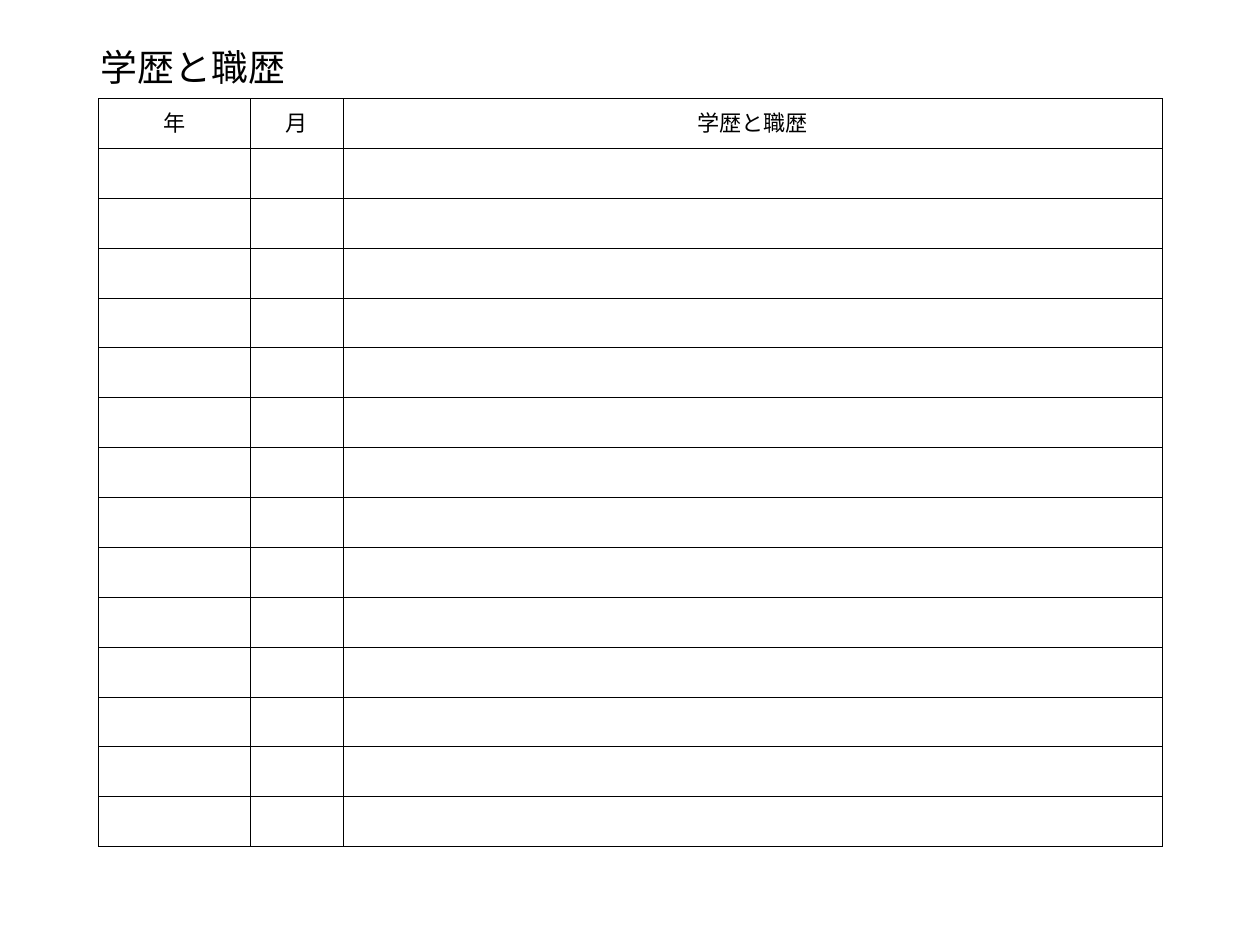
"""Build a blank education and work history form."""
import pptx
import pptx.dml.color
import pptx.enum.text
import pptx.oxml
import pptx.oxml.ns
import pptx.util
import lxml.etree

COLOURS = {"ink": "000000", "paper": "FFFFFF"}
FONT = "Noto Sans CJK JP"
TITLE = "学歴と職歴"
HEADINGS = ("年", "月", "学歴と職歴")
COLUMN_WIDTHS = (1.71, 1.05, 9.25)
ROW_COUNT = 15
ROW_HEIGHT = 8.45 / ROW_COUNT
LEFT = 1.11
TABLE_TOP = 1.11
BORDER_POINTS = 0.25


def colour(name):
    return pptx.dml.color.RGBColor.from_string(COLOURS[name])


def set_margins(frame, inches):
    for side in ("left", "right", "top", "bottom"):
        setattr(frame, f"margin_{side}", pptx.util.Inches(inches))


def add_text(para, text, size, alignment):
    para.alignment = alignment
    para.line_spacing = 0.9
    span = para.add_run()
    span.text = text
    span.font.size = pptx.util.Pt(size)
    span.font.name = FONT
    span.font.color.rgb = colour("ink")
    east_asian = lxml.etree.SubElement(
        span.font._element, pptx.oxml.ns.qn("a:ea"))
    east_asian.set("typeface", FONT)


def add_borders(cell):
    properties = cell._tc.get_or_add_tcPr()
    for position, side in enumerate(("lnL", "lnR", "lnT", "lnB")):
        border = pptx.oxml.parse_xml(
            f'<a:{side} {pptx.oxml.ns.nsdecls("a")} '
            f'w="{pptx.util.Pt(BORDER_POINTS)}"><a:solidFill>'
            f'<a:srgbClr val="{COLOURS["ink"]}"/></a:solidFill></a:{side}>')
        properties.insert(position, border)


def style_cell(cell):
    cell.fill.solid()
    cell.fill.fore_color.rgb = colour("paper")
    cell.vertical_anchor = pptx.enum.text.MSO_ANCHOR.MIDDLE
    set_margins(cell, 0.06)
    add_borders(cell)


def add_history_table(page):
    table = page.shapes.add_table(
        ROW_COUNT, len(HEADINGS),
        pptx.util.Inches(LEFT), pptx.util.Inches(TABLE_TOP),
        pptx.util.Inches(sum(COLUMN_WIDTHS)),
        pptx.util.Inches(ROW_HEIGHT * ROW_COUNT)).table
    table.first_row = False
    table.horz_banding = False
    for column, width in zip(table.columns, COLUMN_WIDTHS):
        column.width = pptx.util.Inches(width)
    for row in table.rows:
        row.height = pptx.util.Inches(ROW_HEIGHT)
    for cell in table.iter_cells():
        style_cell(cell)
    for cell, heading in zip(table.rows[0].cells, HEADINGS):
        add_text(cell.text_frame.paragraphs[0], heading, 18,
                 pptx.enum.text.PP_ALIGN.CENTER)


def add_title(page):
    box = page.shapes.add_textbox(
        pptx.util.Inches(LEFT), pptx.util.Inches(0.55),
        pptx.util.Inches(2.16), pptx.util.Inches(0.48))
    frame = box.text_frame
    frame.word_wrap = False
    frame.vertical_anchor = pptx.enum.text.MSO_ANCHOR.MIDDLE
    set_margins(frame, 0.03)
    add_text(frame.paragraphs[0], TITLE, 30, pptx.enum.text.PP_ALIGN.LEFT)


def main():
    deck = pptx.Presentation()
    deck.slide_width = pptx.util.Inches(14.22)
    deck.slide_height = pptx.util.Inches(10.67)
    page = deck.slides.add_slide(deck.slide_layouts[6])
    add_history_table(page)
    add_title(page)
    deck.save("out.pptx")


if __name__ == "__main__":
    main()
